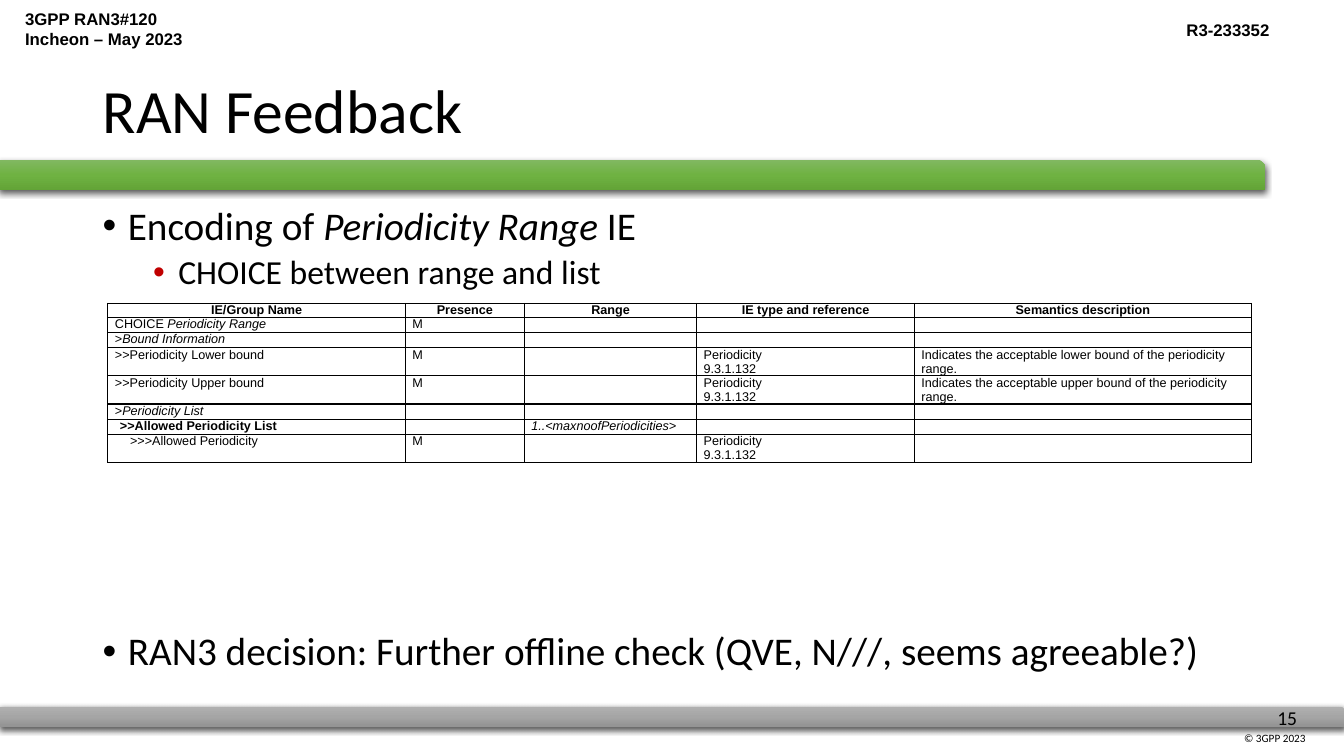
from lxml.etree import SubElement
from pptx import Presentation
from pptx.dml.color import RGBColor
from pptx.enum.shapes import MSO_SHAPE
from pptx.enum.text import MSO_ANCHOR, PP_ALIGN
from pptx.oxml.ns import qn
from pptx.util import Inches, Pt

THEME = {
    "ink": "000000", "accent": "C00000",
    "gray": ("AFAFAF", "A5A5A5", "939393"),
    "green": ("81B861", "6FB242", "62A336"),
    "body": "Calibri", "sans": "Arial",
    "title": 44, "main": 28, "sub": 24, "page": 14, "head": 12, "cell": 9, "note": 8,
}

# Content: *...* marks italic text
BARS = [((0, 7.01, 13.34, 0.2), "gray"), ((-0.01, 1.59, 12.56, 0.3), "green")]

# Place, lines, font, size, bold, right-aligned
LABELS = [
    ((12.24, 7.21, 1.08, 0.23), ["© 3GPP 2023"], "body", "note", False, False),
    ((12.57, 6.95, 0.43, 0.34), ["15"], "body", "page", False, False),
    ((0.15, 0.04, 2.85, 0.51), ["3GPP RAN3#120", "Incheon – May 2023"],
     "sans", "head", True, False),
    ((9.85, 0.15, 2.84, 0.3), ["R3-233352"], "sans", "head", True, True),
]
TITLE = ((0.92, 0.4, 11.5, 1.45), "RAN Feedback")

# Place, then text, size, bullet colour, indent
POINTS = [
    ((0.92, 2, 11.5, 0.95), [
        ("Encoding of *Periodicity Range* IE", "main", "ink", 0.25),
        ("CHOICE between range and list", "sub", "accent", 0.75)]),
    ((0.92, 6.22, 11.5, 0.55), [
        ("RAN3 decision: Further offline check (QVE, N///, seems agreeable?)",
         "main", "ink", 0.25)]),
]

SPOT = (1.07, 3.01)
COLS = [2.95, 1.18, 1.71, 2.16, 3.34]
LINE = 10  # points per line in the table
REF = "Periodicity\n9.3.1.132"
NOTE = "Indicates the acceptable {} bound of the periodicity range."
ROWS = [
    ("IE/Group Name", "Presence", "Range", "IE type and reference", "Semantics description"),
    ("CHOICE *Periodicity Range*", "M", "", "", ""),
    (">*Bound Information*", "", "", "", ""),
    (">>Periodicity Lower bound", "M", "", REF, NOTE.format("lower")),
    (">>Periodicity Upper bound", "M", "", REF, NOTE.format("upper")),
    (">*Periodicity List*", "", "", "", ""),
    (">>Allowed Periodicity List", "", "*1..<maxnoofPeriodicities>*", "", ""),
    (">>>Allowed Periodicity", "M", "", REF, ""),
]
INDENT = {6: 0.05, 7: 0.15}
BOLD = {(0, col) for col in range(len(COLS))} | {(6, 0)}


def write(para, text, face, size, bold=False):
    for i, part in enumerate(text.split("*")):
        if part:
            run = para.add_run()
            run.text = part
            if i % 2:
                run.font.italic = True
    font = para.font
    font.name, font.size, font.bold = THEME[face], Pt(THEME[size]), bold
    font.color.rgb = RGBColor.from_string(THEME["ink"])


def add_box(slide, place):
    frame = slide.shapes.add_textbox(*map(Inches, place)).text_frame
    frame.word_wrap = True
    return frame


def next_para(frame, i):
    return frame.add_paragraph() if i else frame.paragraphs[0]


def add_color(parent, code):
    return SubElement(parent, qn("a:srgbClr"), val=code)


def add_bar(slide, place, tone):
    bar = slide.shapes.add_shape(MSO_SHAPE.SNIP_1_RECTANGLE, *map(Inches, place))
    bar.fill.gradient()
    bar.fill.gradient_angle = 270
    stops = bar.element.spPr.find(".//" + qn("a:gsLst"))
    stops.clear()
    for i, code in enumerate(THEME[tone]):
        add_color(SubElement(stops, qn("a:gs"), pos=str(i * 50000)), code)
    bar.line.fill.background()
    bar.shadow.inherit = False
    glow = SubElement(bar.element.spPr.find(qn("a:effectLst")), qn("a:outerShdw"),
                      blurRad=str(Pt(4.5)), dist=str(Pt(1.5)), dir="5400000",
                      algn="ctr", rotWithShape="0")
    SubElement(add_color(glow, THEME["ink"]), qn("a:alpha"), val="63000")


def add_bullet(para, tone, indent):
    props = para._p.get_or_add_pPr()
    props.set("marL", str(Inches(indent)))
    props.set("indent", str(Inches(-0.25)))
    add_color(SubElement(props, qn("a:buClr")), THEME[tone])
    SubElement(props, qn("a:buFont"), typeface=THEME["sans"])
    SubElement(props, qn("a:buChar"), char="•")


def add_edges(cell):
    props = cell._tc.get_or_add_tcPr()
    for side in ("L", "R", "T", "B"):
        edge = SubElement(props, qn("a:ln" + side), w=str(Pt(1)))
        add_color(SubElement(edge, qn("a:solidFill")), THEME["ink"])


def fill_cell(cell, text, row, col):
    add_edges(cell)
    cell.fill.background()
    cell.margin_left = cell.margin_right = Inches(0.07)
    cell.margin_top = cell.margin_bottom = 0
    for i, line in enumerate(text.split("\n")):
        para = next_para(cell.text_frame, i)
        para.line_spacing = Pt(LINE)
        para.alignment = PP_ALIGN.LEFT if row else PP_ALIGN.CENTER
        if col == 0 and row in INDENT:
            para._p.get_or_add_pPr().set("marL", str(Inches(INDENT[row])))
        write(para, line, "sans", "cell", (row, col) in BOLD)


def add_grid(slide):
    lines = [2 if REF in row else 1 for row in ROWS]
    size = (Inches(sum(COLS)), Pt(LINE * sum(lines)))
    grid = slide.shapes.add_table(len(ROWS), len(COLS), *map(Inches, SPOT), *size).table
    grid.first_row = grid.horz_banding = False
    for col, width in zip(grid.columns, COLS):
        col.width = Inches(width)
    for r, row in enumerate(ROWS):
        grid.rows[r].height = Pt(LINE * lines[r])
        for c, text in enumerate(row):
            fill_cell(grid.cell(r, c), text, r, c)


def main():
    deck = Presentation()
    deck.slide_width, deck.slide_height = Inches(13.33), Inches(7.5)
    slide = deck.slides.add_slide(deck.slide_layouts[6])

    # Bars and labels
    for place, tone in BARS:
        add_bar(slide, place, tone)
    for place, lines, face, size, bold, right in LABELS:
        frame = add_box(slide, place)
        for i, line in enumerate(lines):
            para = next_para(frame, i)
            para.alignment = PP_ALIGN.RIGHT if right else PP_ALIGN.LEFT
            write(para, line, face, size, bold)

    # Title
    place, text = TITLE
    frame = add_box(slide, place)
    frame.vertical_anchor = MSO_ANCHOR.MIDDLE
    frame.paragraphs[0].line_spacing = 0.9
    write(frame.paragraphs[0], text, "body", "title")

    # Bullet points
    for place, items in POINTS:
        frame = add_box(slide, place)
        for i, (text, size, tone, indent) in enumerate(items):
            para = next_para(frame, i)
            add_bullet(para, tone, indent)
            para.line_spacing = 0.9
            if i:
                para.space_before = Pt(5)
            write(para, text, "body", size)

    # Table
    add_grid(slide)
    deck.save("out.pptx")


if __name__ == "__main__":
    main()
